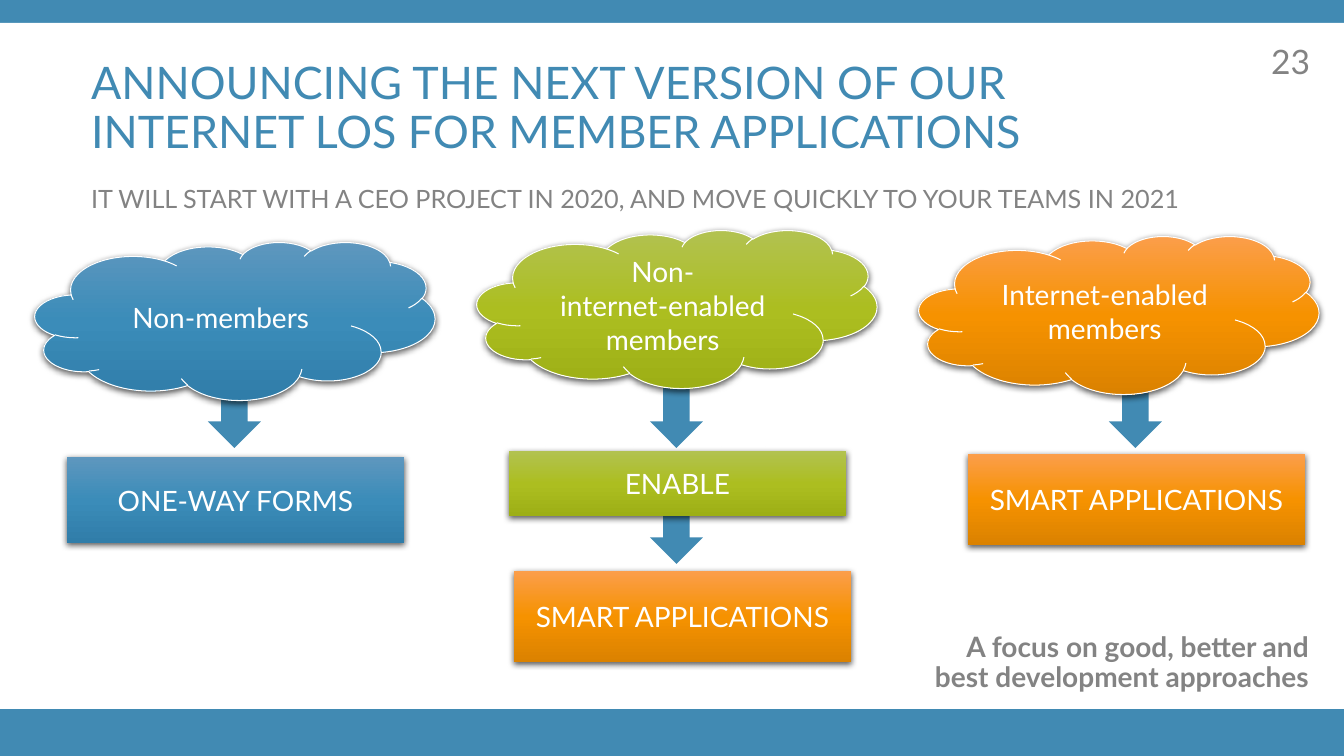
from copy import deepcopy
from dataclasses import dataclass

from lxml.etree import SubElement
from pptx import Presentation
from pptx.dml.color import RGBColor
from pptx.enum.shapes import MSO_SHAPE as Preset
from pptx.enum.text import MSO_ANCHOR as Anchor, MSO_AUTO_SIZE as AutoSize, PP_ALIGN as Align
from pptx.oxml.ns import qn
from pptx.util import Emu, Pt

EMU_PER_PX = 914400 / 100.8
FONT = "Lato"
BLUE, GREY, WHITE = "418AB3", "838383", "FFFFFF"
BLUE_SHADES = ("5E97BE", "3B8CB9", "307DA9")
GREEN_SHADES = ("B2C251", "ACBE20", "9DAF16")
ORANGE_SHADES = ("FB9E4B", "F69200", "DB8200")
ARROW_SIZE = (53, 65)
CLOUD_SIZE = (400, 158)
BOX_WIDTH = 337


@dataclass
class Cloud:
    left: int
    top: int
    text: str
    shades: tuple[str, str, str]


@dataclass
class Box:
    left: int
    top: int
    height: int
    text: str
    shades: tuple[str, str, str]


ARROWS = [(650, 499), (208, 383), (650, 383), (1109, 383)]
CLOUDS = [
    Cloud(35, 242, "Non-members", BLUE_SHADES),
    Cloud(477, 230, "Non-\ninternet-enabled members", GREEN_SHADES),
    Cloud(919, 236, "Internet-enabled members", ORANGE_SHADES),
]
BOXES = [
    Box(67, 457, 86, "ONE-WAY FORMS", BLUE_SHADES),
    Box(509, 451, 65, "ENABLE", GREEN_SHADES),
    Box(968, 454, 91, "SMART APPLICATIONS", ORANGE_SHADES),
    Box(514, 571, 91, "SMART APPLICATIONS", ORANGE_SHADES),
]


def px(length: int) -> Emu:
    return Emu(round(length * EMU_PER_PX))


def rgb(color: str) -> RGBColor:
    return RGBColor.from_string(color)


def place(shape, left: int, top: int, width: int, height: int) -> None:
    shape.left, shape.top = px(left), px(top)
    shape.width, shape.height = px(width), px(height)


def write(shape, text: str, size: int, color: str, align, anchor,
          bold: bool = False, line_spacing: float = 1.0) -> None:
    frame = shape.text_frame
    frame.word_wrap = True
    frame.auto_size = AutoSize.NONE
    frame.vertical_anchor = anchor
    paragraph = frame.paragraphs[0]
    paragraph.text = text
    paragraph.alignment = align
    paragraph.line_spacing = line_spacing
    paragraph.space_before = Pt(0)
    for run in paragraph.runs:
        run.font.name = FONT
        run.font.size = Pt(size)
        run.font.bold = bold
        run.font.color.rgb = rgb(color)


def add_plain(slide, preset, left: int, top: int, width: int, height: int, color: str):
    shape = slide.shapes.add_shape(preset, px(left), px(top), px(width), px(height))
    shape.shadow.inherit = False
    shape.fill.solid()
    shape.fill.fore_color.rgb = rgb(color)
    shape.line.fill.background()
    return shape


def fill_gradient(shape, shades: tuple[str, str, str]) -> None:
    shape.fill.gradient()
    shape.fill.gradient_angle = 270
    stop_list = shape._element.spPr.find(".//" + qn("a:gsLst"))
    stop_list.insert(1, deepcopy(stop_list[0]))
    for index, (stop, shade) in enumerate(zip(shape.fill.gradient_stops, shades)):
        stop.position = index / 2
        stop.color.rgb = rgb(shade)


def add_shadow(shape) -> None:
    effects = shape._element.spPr.find(qn("a:effectLst"))
    shadow = SubElement(effects, qn("a:outerShdw"), blurRad=str(Pt(4.5)),
                        dist=str(Pt(1.5)), dir="5400000", rotWithShape="0")
    color = SubElement(shadow, qn("a:srgbClr"), val="000000")
    SubElement(color, qn("a:alpha"), val="63000")


def add_glossy(slide, preset, left: int, top: int, width: int, height: int,
               text: str, shades: tuple[str, str, str]):
    shape = add_plain(slide, preset, left, top, width, height, shades[1])
    fill_gradient(shape, shades)
    add_shadow(shape)
    write(shape, text, 20, WHITE, Align.CENTER, Anchor.MIDDLE)
    return shape


def add_cloud(slide, cloud: Cloud) -> None:
    shape = add_glossy(slide, Preset.CLOUD, cloud.left, cloud.top, *CLOUD_SIZE,
                       cloud.text, cloud.shades)
    shape.line.color.rgb = rgb(WHITE)
    shape.line.width = Pt(0.75)
    frame = shape.text_frame
    frame.margin_left = frame.margin_right = frame.margin_top = frame.margin_bottom = 0


def main() -> None:
    presentation = Presentation()
    presentation.slide_width, presentation.slide_height = px(1344), px(756)
    slide = presentation.slides.add_slide(presentation.slide_layouts.get_by_name("Comparison"))

    # Blue background with a white panel behind everything
    slide.background.fill.solid()
    slide.background.fill.fore_color.rgb = rgb(BLUE)
    panel = add_plain(slide, Preset.RECTANGLE, 0, 23, 1344, 686, WHITE)
    slide.shapes._spTree.insert(2, panel._element)

    # Title, subtitle and closing line
    placeholders = {shape.placeholder_format.idx: shape for shape in slide.placeholders}
    title, subtitle, closing = (placeholders[idx] for idx in (0, 1, 3))
    for idx in (2, 4):
        slide.shapes._spTree.remove(placeholders[idx]._element)
    place(title, 81, 25, 1121, 138)
    write(title, "ANNOUNCING THE NEXT VERSION OF OUR INTERNET LOS FOR MEMBER APPLICATIONS",
          32, BLUE, Align.LEFT, Anchor.BOTTOM, line_spacing=0.9)
    place(subtitle, 81, 182, 1121, 38)
    write(subtitle, "IT WILL START WITH A CEO PROJECT IN 2020, AND MOVE QUICKLY TO YOUR TEAMS IN 2021",
          18, GREY, Align.LEFT, Anchor.TOP, line_spacing=0.9)
    place(closing, 901, 598, 418, 101)
    write(closing, "A focus on good, better and best development approaches",
          20, GREY, Align.RIGHT, Anchor.BOTTOM, bold=True, line_spacing=0.9)

    # Page number
    number = slide.shapes.add_textbox(px(1244), px(46), px(76), px(30))
    write(number, "23", 24, GREY, Align.RIGHT, Anchor.MIDDLE)

    # Arrows, partly covered by the clouds and boxes
    for left, top in ARROWS:
        add_plain(slide, Preset.DOWN_ARROW, left, top, *ARROW_SIZE, BLUE)
    for cloud in CLOUDS:
        add_cloud(slide, cloud)
    for box in BOXES:
        add_glossy(slide, Preset.FLOWCHART_PROCESS, box.left, box.top, BOX_WIDTH,
                   box.height, box.text, box.shades)

    presentation.save("out.pptx")


if __name__ == "__main__":
    main()
